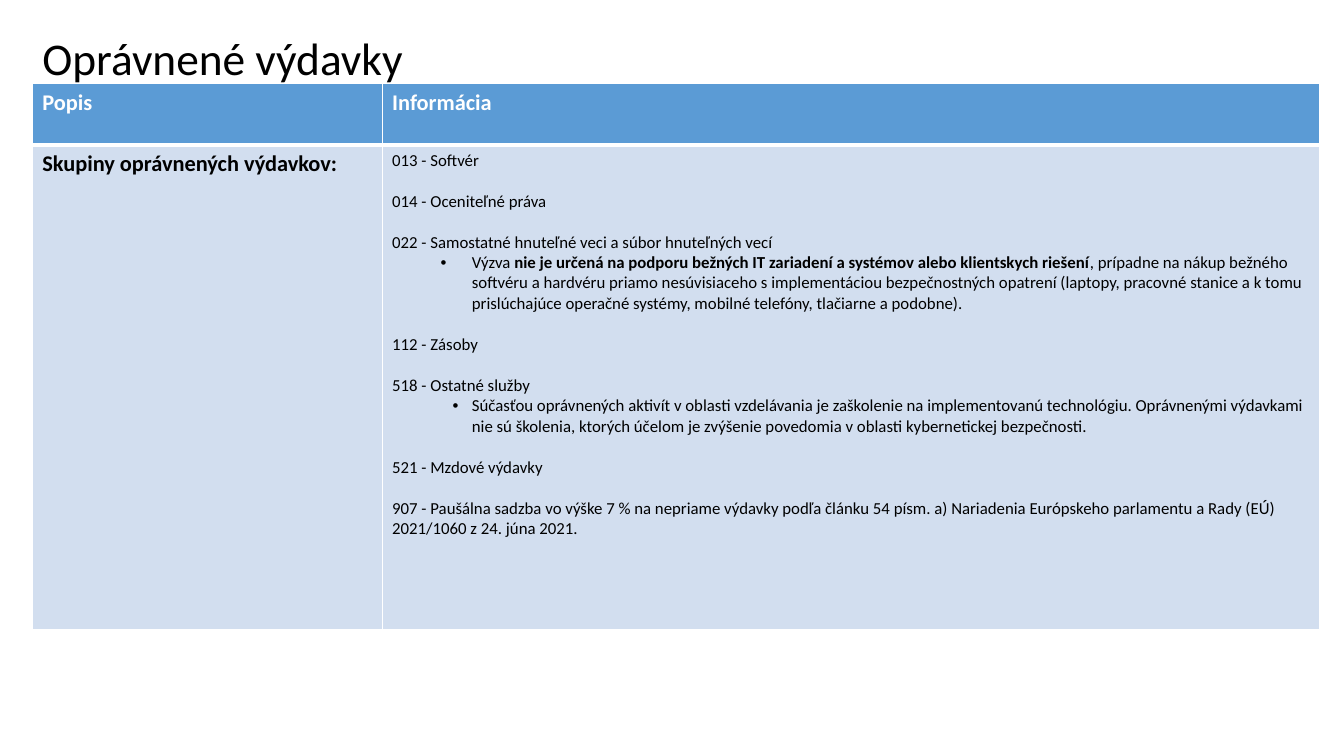
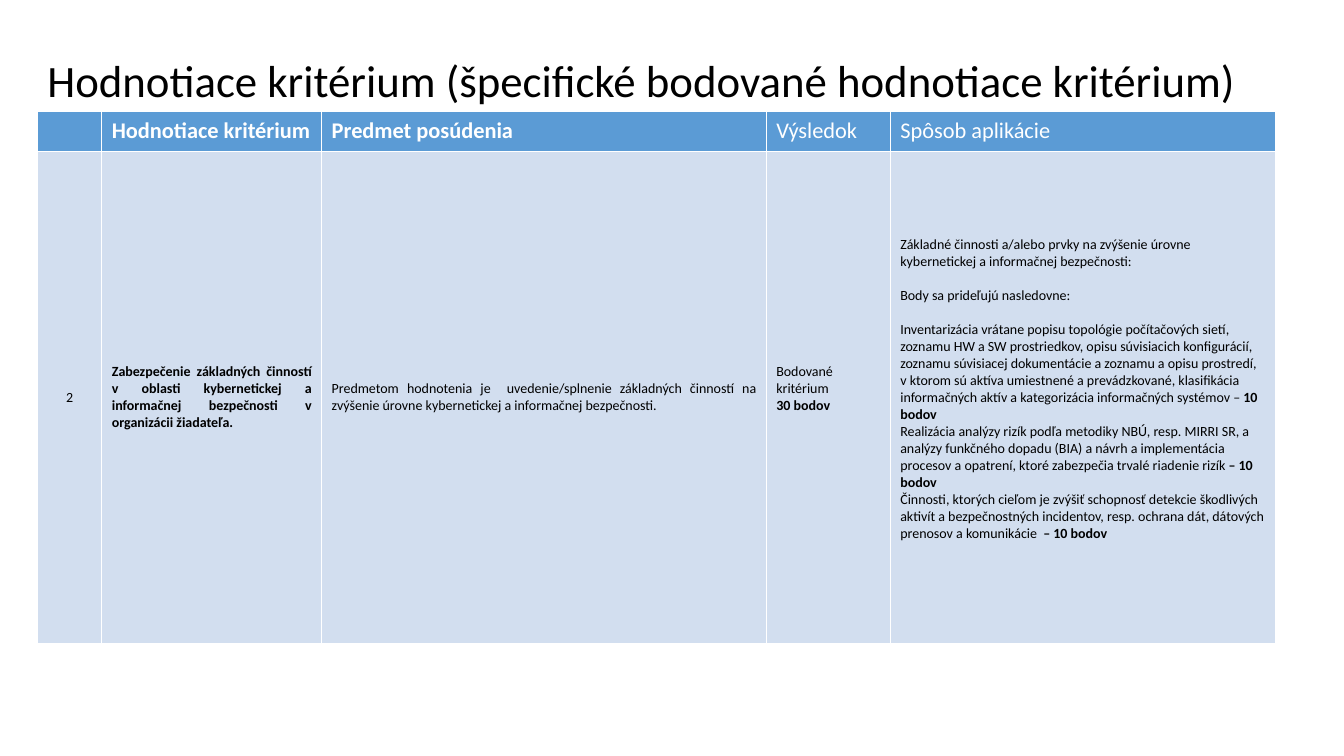
from dataclasses import dataclass

from lxml.etree import SubElement
from pptx import Presentation
from pptx.dml.color import RGBColor
from pptx.enum.text import MSO_ANCHOR, MSO_AUTO_SIZE, PP_ALIGN
from pptx.oxml.ns import qn
from pptx.util import Inches, Pt

FONT = "Calibri"
COLORS = {"header": "5B9BD5", "body": "D2DEEF", "white": "FFFFFF", "text": "000000"}
HEADER_SIZE = 16
LINE_HEIGHT = 1.22  # one line of text, as a multiple of its size
BULLET_INDENT = 0.79


@dataclass
class Paragraph:
    runs: list  # (text, bold)
    gap: bool = False  # one line of space before
    hanging: float = 0  # bullet distance; 0 means no bullet


@dataclass
class Cell:
    paragraphs: list
    size: float
    align: PP_ALIGN = PP_ALIGN.LEFT
    anchor: MSO_ANCHOR = MSO_ANCHOR.MIDDLE
    bottom: float = 0.05


# Content: expenses
EXPENSE_GROUPS = [
    Paragraph([("013 - Softvér", False)]),
    Paragraph([("014 - Oceniteľné práva", False)], gap=True),
    Paragraph([("022 - Samostatné hnuteľné veci a súbor hnuteľných vecí", False)], gap=True),
    Paragraph([
        ("Výzva ", False),
        ("nie je určená na podporu bežných IT zariadení a systémov alebo klientskych riešení", True),
        (", prípadne na nákup bežného softvéru a hardvéru priamo nesúvisiaceho s implementáciou "
         "bezpečnostných opatrení (laptopy, pracovné stanice a k tomu prislúchajúce operačné "
         "systémy, mobilné telefóny, tlačiarne a podobne).", False),
    ], hanging=0.31),
    Paragraph([("112 - Zásoby", False)], gap=True),
    Paragraph([("518 - Ostatné služby", False)], gap=True),
    Paragraph([
        ("Súčasťou oprávnených aktivít v oblasti vzdelávania je zaškolenie na implementovanú "
         "technológiu. Oprávnenými výdavkami nie sú školenia, ktorých účelom je zvýšenie "
         "povedomia v oblasti kybernetickej bezpečnosti.", False),
    ], hanging=0.19),
    Paragraph([("521 - Mzdové výdavky", False)], gap=True),
    Paragraph([
        ("907 - Paušálna sadzba vo výške 7 % na nepriame výdavky podľa článku 54 písm. a) "
         "Nariadenia Európskeho parlamentu a Rady (EÚ) 2021/1060 z 24. júna 2021.", False),
    ], gap=True),
]

# Content: scoring
SCORING = [
    Paragraph([("Základné činnosti a/alebo prvky na zvýšenie úrovne kybernetickej a "
                "informačnej bezpečnosti:", False)]),
    Paragraph([("Body sa prideľujú nasledovne:", False)], gap=True),
    Paragraph([
        ("Inventarizácia vrátane popisu topológie počítačových sietí, zoznamu HW a SW "
         "prostriedkov, opisu súvisiacich konfigurácií, zoznamu súvisiacej dokumentácie a "
         "zoznamu a opisu prostredí, v ktorom sú aktíva umiestnené a prevádzkované, "
         "klasifikácia informačných aktív a kategorizácia informačných systémov – ", False),
        ("10 bodov", True),
    ], gap=True),
    Paragraph([
        ("Realizácia analýzy rizík podľa metodiky NBÚ, resp. MIRRI SR, a analýzy funkčného "
         "dopadu (BIA) a návrh a implementácia procesov a opatrení, ktoré zabezpečia trvalé "
         "riadenie rizík ", False),
        ("– 10 bodov", True),
    ]),
    Paragraph([
        ("Činnosti, ktorých cieľom je zvýšiť schopnosť detekcie škodlivých aktivít a "
         "bezpečnostných incidentov, resp. ochrana dát, dátových prenosov a komunikácie  ", False),
        ("– 10 bodov", True),
    ]),
]

SLIDES = [
    {
        "title": "Oprávnené výdavky",
        "title_size": 32.4,
        "title_box": (0.32, 0.35, 10, 0.51),
        "title_anchor": MSO_ANCHOR.MIDDLE,
        "table_at": (0.32, 0.83),
        "columns": [3.47, 9.3],
        "rows": [0.61, 4.81],
        "header_rule": 3,
        "header": [("Popis", True), ("Informácia", True)],
        "body": [
            Cell([Paragraph([("Skupiny oprávnených výdavkov:", True)])], 16,
                 PP_ALIGN.JUSTIFY, MSO_ANCHOR.TOP),
            Cell(EXPENSE_GROUPS, 12, anchor=MSO_ANCHOR.TOP),
        ],
    },
    {
        "title": "Hodnotiace kritérium (špecifické bodované hodnotiace kritérium)",
        "title_size": 32,
        "title_box": (0.37, 0.29, 12.29, 0.82),
        "title_anchor": MSO_ANCHOR.BOTTOM,
        "table_at": (0.37, 1.11),
        "columns": [0.64, 2.18, 4.41, 1.23, 3.82],
        "rows": [0.39, 4.89],
        "header_rule": 1,
        "header": [("", True), ("Hodnotiace kritérium", True), ("Predmet posúdenia", True),
                   ("Výsledok", False), ("Spôsob aplikácie", False)],
        "body": [
            Cell([Paragraph([("2", False)])], 10, PP_ALIGN.CENTER),
            Cell([Paragraph([("Zabezpečenie základných činností v oblasti kybernetickej a "
                              "informačnej bezpečnosti v organizácii žiadateľa.", True)])],
                 10, PP_ALIGN.JUSTIFY),
            Cell([Paragraph([("Predmetom hodnotenia je  uvedenie/splnenie základných činností na "
                              "zvýšenie úrovne kybernetickej a informačnej bezpečnosti.", False)])],
                 10, PP_ALIGN.JUSTIFY),
            Cell([Paragraph([("Bodované kritérium", False)]), Paragraph([("30 bodov", True)])],
                 10, PP_ALIGN.JUSTIFY, bottom=0.22),
            Cell(SCORING, 10, bottom=0.22),
        ],
    },
]


def add_run(paragraph, text, size, color, bold=False):
    run = paragraph.add_run()
    run.text = text
    run.font.name = FONT
    run.font.size = Pt(size)
    run.font.bold = bold
    run.font.color.rgb = RGBColor.from_string(COLORS[color])


def add_bullet(paragraph, hanging):
    properties = paragraph._p.get_or_add_pPr()
    properties.set("marL", str(Inches(BULLET_INDENT)))
    properties.set("indent", str(-Inches(hanging)))
    SubElement(properties, qn("a:buFont")).set("typeface", "Arial")
    SubElement(properties, qn("a:buChar")).set("char", "•")


def style_cell(cell, fill, top=1, bottom=1):
    properties = cell._tc.get_or_add_tcPr()
    for side, width in (("L", 1), ("R", 1), ("T", top), ("B", bottom)):
        line = SubElement(properties, qn(f"a:ln{side}"), w=str(Pt(width)))
        line_fill = SubElement(line, qn("a:solidFill"))
        SubElement(line_fill, qn("a:srgbClr")).set("val", COLORS["white"])
    cell.fill.solid()
    cell.fill.fore_color.rgb = RGBColor.from_string(COLORS[fill])


def fill_header(cell, text, bold, rule):
    style_cell(cell, "header", bottom=rule)
    if text:
        add_run(cell.text_frame.paragraphs[0], text, HEADER_SIZE, "white", bold)
    else:
        cell.margin_top = cell.margin_bottom = Inches(0.02)


def fill_body(cell, content, rule):
    style_cell(cell, "body", top=rule)
    cell.vertical_anchor = content.anchor
    cell.margin_bottom = Inches(content.bottom)
    frame = cell.text_frame
    for index, item in enumerate(content.paragraphs):
        paragraph = frame.add_paragraph() if index else frame.paragraphs[0]
        paragraph.alignment = content.align
        if item.gap:
            paragraph.space_before = Pt(content.size * LINE_HEIGHT)
        if item.hanging:
            add_bullet(paragraph, item.hanging)
        for text, bold in item.runs:
            add_run(paragraph, text, content.size, "text", bold)


def set_title(slide, data):
    title = slide.shapes.title
    title.left, title.top, title.width, title.height = map(Inches, data["title_box"])
    frame = title.text_frame
    frame.word_wrap = True
    frame.auto_size = MSO_AUTO_SIZE.NONE
    frame.vertical_anchor = data["title_anchor"]
    paragraph = frame.paragraphs[0]
    paragraph.alignment = PP_ALIGN.LEFT
    paragraph.line_spacing = 0.9
    add_run(paragraph, data["title"], data["title_size"], "text")


def add_data_table(slide, data):
    columns, rows = data["columns"], data["rows"]
    left, top = data["table_at"]
    table = slide.shapes.add_table(
        len(rows), len(columns), Inches(left), Inches(top),
        Inches(sum(columns)), Inches(sum(rows))).table
    for column, width in zip(table.columns, columns):
        column.width = Inches(width)
    for row, height in zip(table.rows, rows):
        row.height = Inches(height)
    rule = data["header_rule"]
    for index, (heading, content) in enumerate(zip(data["header"], data["body"])):
        fill_header(table.cell(0, index), *heading, rule)
        fill_body(table.cell(1, index), content, rule)


def main():
    presentation = Presentation()
    presentation.slide_width = Inches(13.33)
    presentation.slide_height = Inches(7.5)
    title_only = presentation.slide_layouts[5]
    for data in SLIDES:
        slide = presentation.slides.add_slide(title_only)
        set_title(slide, data)
        add_data_table(slide, data)
    presentation.save("out.pptx")


if __name__ == "__main__":
    main()
